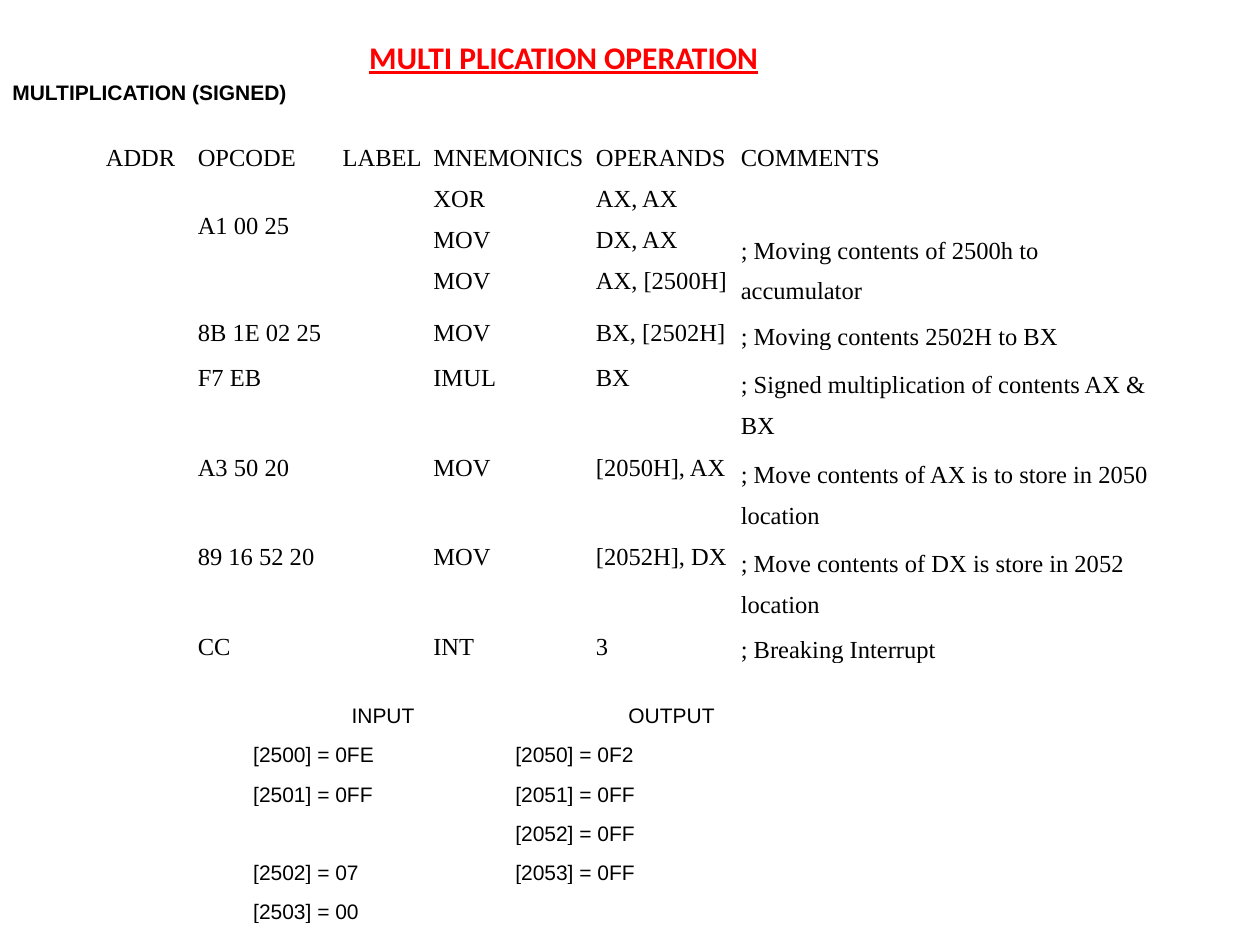
from pptx import Presentation
from pptx.dml.color import RGBColor as Rgb
from pptx.enum.text import MSO_ANCHOR as Anchor, MSO_AUTO_SIZE as Auto, PP_ALIGN as Align
from pptx.util import Inches, Pt

HUES = {"title": "FF0000", "text": "000000"}
COLS, ROWS = 100, 75

CODE = [
    ["ADDR", "OPCODE", "LABEL", "MNEMONICS", "OPERANDS", "COMMENTS"],
    ["", "A1 00 25", "", "XOR\nMOV\nMOV", "AX, AX\nDX, AX\nAX, [2500H]",
     "; Moving contents of 2500h to accumulator"],
    ["", "8B 1E 02 25", "", "MOV", "BX, [2502H]", "; Moving contents 2502H to BX"],
    ["", "F7 EB", "", "IMUL", "BX", "; Signed multiplication of contents AX & BX"],
    ["", "A3 50 20", "", "MOV", "[2050H], AX",
     "; Move contents of AX is to store in 2050 location"],
    ["", "89 16 52 20", "", "MOV", "[2052H], DX",
     "; Move contents of DX is store in 2052 location"],
    ["", "CC", "", "INT", "3", "; Breaking Interrupt"],
]
DATA = [
    ["INPUT", "OUTPUT"],
    ["[2500] = 0FE", "[2050] = 0F2"],
    ["[2501] = 0FF", "[2051] = 0FF"],
    ["", "[2052] = 0FF"],
    ["[2502] = 07", "[2053] = 0FF"],
    ["[2503] = 00", ""],
]


class Page:
    """Holds the grid, the text style and the current slide."""

    def __init__(self, deck):
        self.slide = deck.slides.add_slide(deck.slide_layouts[5])
        self.dx = deck.slide_width / COLS
        self.dy = deck.slide_height / ROWS

    def box(self, x, y, w, h):
        return [int(n) for n in (x * self.dx, y * self.dy, w * self.dx, h * self.dy)]

    def style(self, para, face, size, hue="text", bold=False, line=False):
        for run in para.runs:
            font = run.font
            font.name, font.size = face, Pt(size)
            font.bold, font.underline = bold, line
            font.color.rgb = Rgb.from_string(HUES[hue])

    def title(self, text, *area):
        shape = self.slide.shapes.title
        shape.left, shape.top, shape.width, shape.height = self.box(*area)
        frame = shape.text_frame
        frame.text = text
        frame.word_wrap = False
        frame.auto_size = Auto.SHAPE_TO_FIT_TEXT
        frame.vertical_anchor = Anchor.TOP
        para = frame.paragraphs[0]
        para.alignment = Align.LEFT
        self.style(para, "Calibri", 18, "title", True, True)

    def label(self, text, *area):
        frame = self.slide.shapes.add_textbox(*self.box(*area)).text_frame
        frame.text = text
        frame.word_wrap = True
        frame.vertical_anchor = Anchor.MIDDLE
        self.style(frame.paragraphs[0], "Arial", 12, bold=True)

    def table(self, x, y, wide, high, data, face, size):
        area = self.box(x, y, sum(wide), sum(high))
        grid = self.slide.shapes.add_table(len(high), len(wide), *area).table
        grid.first_row = grid.horz_banding = False
        for col, w in zip(grid.columns, wide):
            col.width = int(w * self.dx)
        for row, h, texts in zip(grid.rows, high, data):
            row.height = int(h * self.dy)
            for cell, text in zip(row.cells, texts):
                self.cell(cell, text, face, size)
        return grid

    def cell(self, cell, text, face, size):
        cell.fill.background()
        cell.margin_left = cell.margin_right = cell.margin_top = Inches(0.01)
        cell.margin_bottom = 0
        cell.vertical_anchor = Anchor.BOTTOM
        if text:
            cell.text_frame.text = text
            for para in cell.text_frame.paragraphs:
                para.line_spacing = 1.5
                self.style(para, face, size)


def main():
    deck = Presentation()
    deck.slide_width, deck.slide_height = Inches(10), Inches(7.5)
    page = Page(deck)

    # Headings
    page.title("MULTI PLICATION OPERATION", 28.3, 2.5, 33.2, 4)
    page.label("MULTIPLICATION (SIGNED)", 0, 5.8, 25.8, 3)

    # Program listing: code sits at the top of each row, comments at the bottom
    code = page.table(8.3, 10, [7.3, 11.5, 7.2, 12.9, 11.5, 33],
                      [3.5, 10.6, 3.6, 7.1, 7.1, 7.1, 3.6],
                      CODE, "Times New Roman", 14)
    for r in range(1, len(CODE)):
        for c in range(5):
            code.cell(r, c).vertical_anchor = Anchor.TOP
    code.cell(1, 1).margin_top = Inches(0.22)

    # Input and output values
    data = page.table(20, 54.7, [20.8, 25], [3.1] * len(DATA), DATA, "Arial", 12)
    for cell in data.rows[0].cells:
        cell.text_frame.paragraphs[0].alignment = Align.CENTER

    deck.save("out.pptx")


if __name__ == "__main__":
    main()
